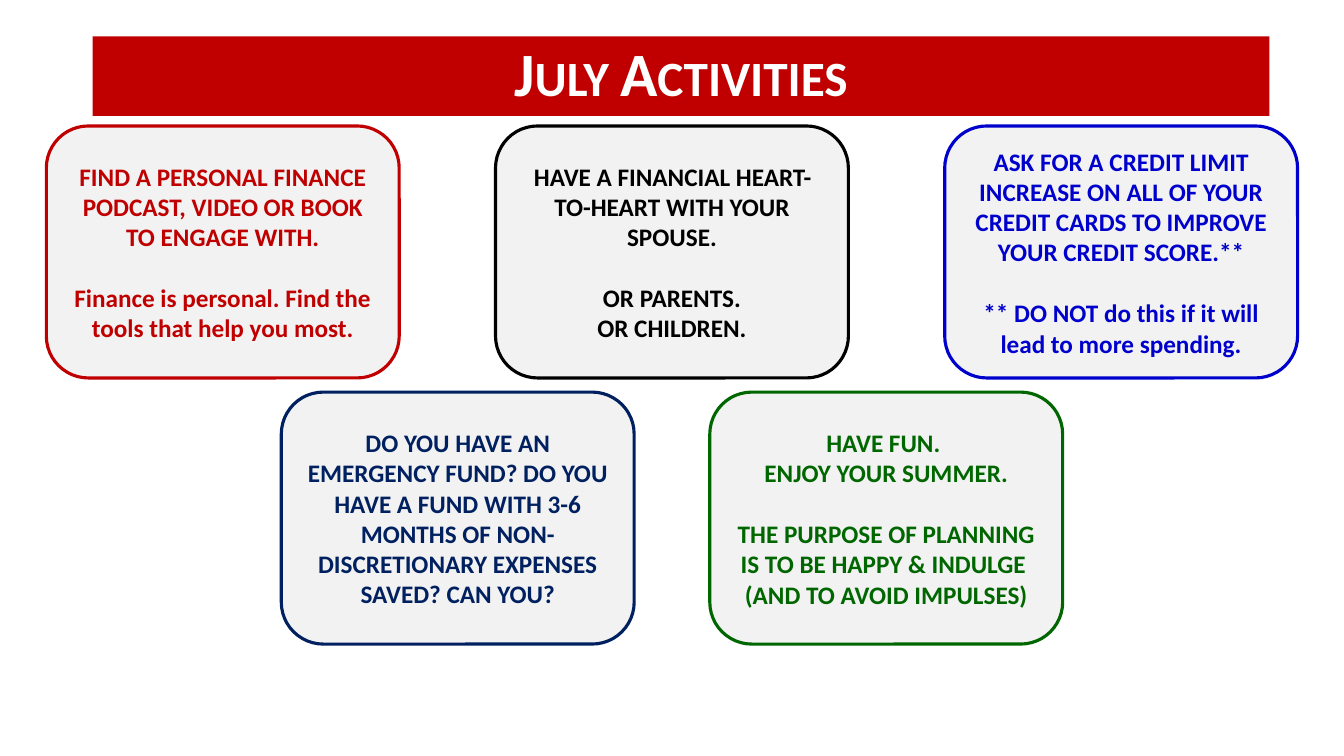
import pptx
import pptx.dml.color
import pptx.enum.shapes
import pptx.enum.text
import pptx.util

INCH = pptx.util.Inches
SHAPE = pptx.enum.shapes.MSO_SHAPE
COLORS = {
    "red": "C00000", "black": "000000", "blue": "0000CC", "navy": "002060",
    "green": "006600", "gray": "F2F2F2", "white": "FFFFFF",
}
CARD_W, CARD_H = 3.5, 2.5
TOP, ROW_STEP = 1.25, 2.64

# Each row: left of the first card, left of the last card, cards.
# Each card: colour, then groups of paragraphs set apart by a gap.
ROWS = [
    (0.46, 9.37, [
        ("red", [["FIND A PERSONAL FINANCE PODCAST, VIDEO OR BOOK TO ENGAGE WITH."],
                 ["Finance is personal. Find the tools that help you most."]]),
        ("black", [["HAVE A FINANCIAL HEART-TO-HEART WITH YOUR SPOUSE."],
                   ["OR PARENTS.", "OR CHILDREN."]]),
        ("blue", [["ASK FOR A CREDIT LIMIT INCREASE ON ALL OF YOUR CREDIT CARDS "
                   "TO IMPROVE YOUR CREDIT SCORE.**"],
                  ["** DO NOT do this if it will lead to more spending."]]),
    ]),
    (2.79, 7.04, [
        ("navy", [["DO YOU HAVE AN EMERGENCY FUND? DO YOU HAVE A FUND WITH 3-6 MONTHS "
                   "OF NON-DISCRETIONARY EXPENSES SAVED? CAN YOU?"]]),
        ("green", [["HAVE FUN. ", "ENJOY YOUR SUMMER."],
                   ["THE PURPOSE OF PLANNING IS TO BE HAPPY & INDULGE \n"
                    "(AND TO AVOID IMPULSES)"]]),
    ]),
]


def tint(name):
    return pptx.dml.color.RGBColor.from_string(COLORS[name])


def add_box(slide, kind, place, fill, edge=None):
    box = slide.shapes.add_shape(kind, *map(INCH, place))
    box.shadow.inherit = False
    box.fill.solid()
    box.fill.fore_color.rgb = tint(fill)
    if edge:
        box.line.color.rgb = tint(edge)
        box.line.width = pptx.util.Pt(2.25)
    else:
        box.line.fill.background()
    frame = box.text_frame
    frame.word_wrap = True
    frame.vertical_anchor = pptx.enum.text.MSO_ANCHOR.MIDDLE
    return frame


def add_run(para, text, size, color):
    para.alignment = pptx.enum.text.PP_ALIGN.CENTER
    run = para.add_run()
    run.text = text
    run.font.name = "Calibri"
    run.font.size = pptx.util.Pt(size)
    run.font.bold = True
    run.font.color.rgb = tint(color)
    return run


def add_title(slide, text):
    frame = add_box(slide, SHAPE.RECTANGLE, (0.92, 0.36, 11.67, 0.79), "red")
    para = frame.paragraphs[0]
    para.line_spacing = 0.9
    run = add_run(para, text, 44, "white")
    run.font._element.set("cap", "small")


def add_card(slide, left, top, color, groups):
    place = (left, top, CARD_W, CARD_H)
    frame = add_box(slide, SHAPE.ROUNDED_RECTANGLE, place, "gray", color)
    para = None
    for group in groups:
        for num, text in enumerate(group):
            first = para is None
            para = frame.paragraphs[0] if first else frame.add_paragraph()
            if num == 0 and not first:
                para.space_before = pptx.util.Pt(22)
            for part, line in enumerate(text.split("\n")):
                if part:
                    para.add_line_break()
                add_run(para, line, 18, color)


def main():
    deck = pptx.Presentation()
    deck.slide_width, deck.slide_height = INCH(13.33), INCH(7.5)
    slide = deck.slides.add_slide(deck.slide_layouts[6])
    add_title(slide, "July Activities")
    for row, (start, end, cards) in enumerate(ROWS):
        step = (end - start) / (len(cards) - 1)
        for col, (color, groups) in enumerate(cards):
            add_card(slide, start + col * step, TOP + row * ROW_STEP, color, groups)
    deck.save("out.pptx")


if __name__ == "__main__":
    main()
